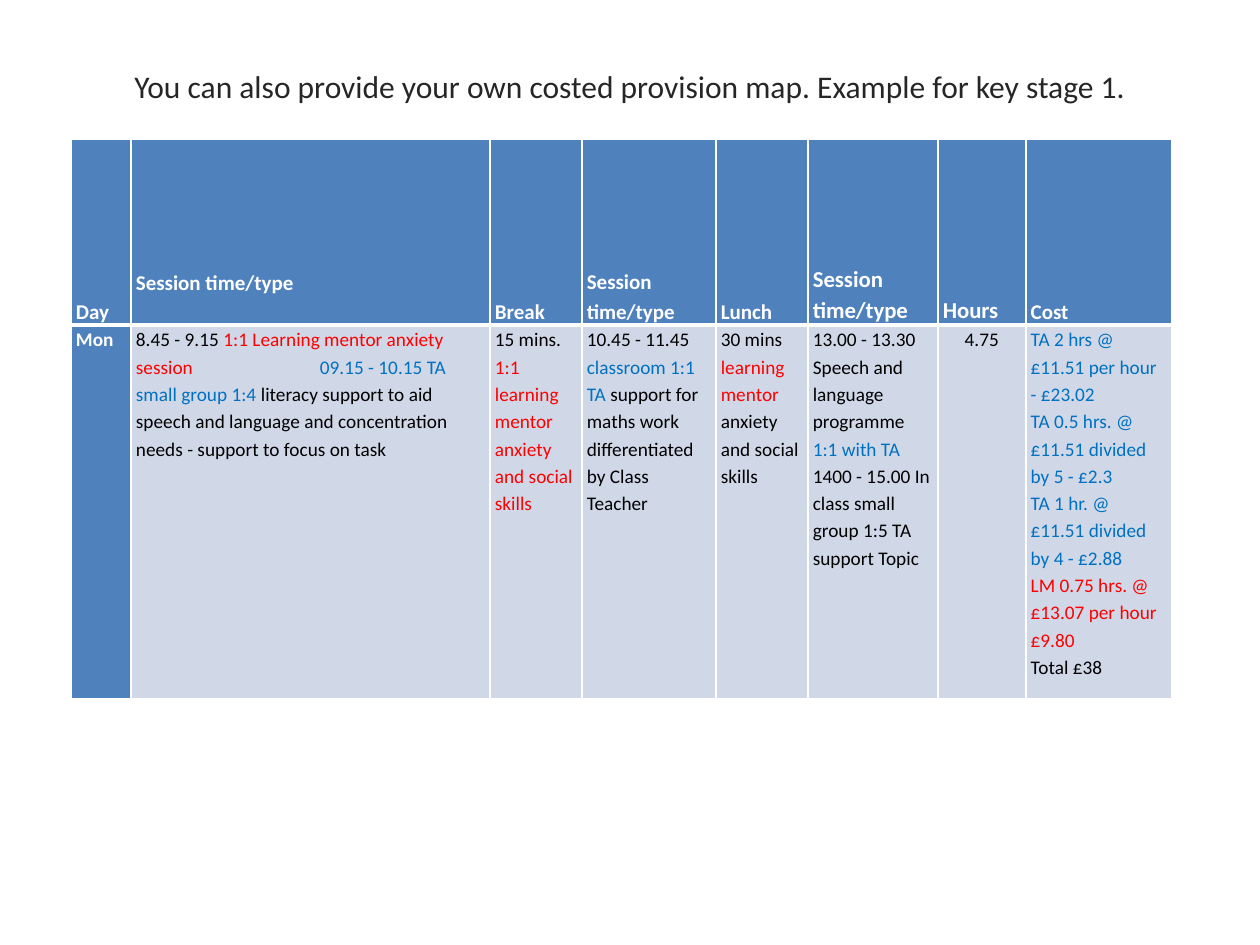
from lxml import etree
from pptx import Presentation
from pptx.dml.color import RGBColor
from pptx.enum.text import MSO_ANCHOR, PP_ALIGN
from pptx.oxml.ns import qn
from pptx.util import Pt

PX = 914400 // 126
CENTER = PP_ALIGN.CENTER
LEFT = PP_ALIGN.LEFT
TOP = MSO_ANCHOR.TOP
MIDDLE = MSO_ANCHOR.MIDDLE
BOTTOM = MSO_ANCHOR.BOTTOM

FONT = "Calibri"
WHITE = RGBColor(0xFF, 0xFF, 0xFF)
BLACK = RGBColor(0x00, 0x00, 0x00)
CHARCOAL = RGBColor(0x26, 0x26, 0x26)
MENTOR_RED = RGBColor(0xFF, 0x00, 0x00)
ASSISTANT_BLUE = RGBColor(0x00, 0x70, 0xC0)
HEADER_BLUE = RGBColor(0x4F, 0x81, 0xBD)
PALE_BLUE = RGBColor(0xD0, 0xD8, 0xE8)

TITLE = "You can also provide your own costed provision map. Example for key stage 1."
COLUMN_WIDTHS = [60, 359, 92, 134, 92, 130, 88, 146]
ROW_HEIGHTS = [186, 374]
SESSION_TAB = 184

HEADERS = [
    ("Day", 12, 0),
    ("Session time/type", 12, 29),
    ("Break", 12, 0),
    ("Session time/type", 12, 0),
    ("Lunch", 12, 0),
    ("Session time/type", 13, 0),
    ("Hours", 13, 0),
    ("Cost", 12, 0),
]

MONDAY = [
    [[("8.45 - 9.15 ", BLACK),
      ("1:1 Learning mentor anxiety session\t", MENTOR_RED),
      ("09.15 - 10.15 TA small group 1:4 ", ASSISTANT_BLUE),
      ("literacy support to aid speech and language and concentration "
       "needs - support to focus on task", BLACK)]],
    [[("15 mins. ", BLACK),
      ("1:1 learning mentor anxiety and social skills", MENTOR_RED)]],
    [[("10.45 - 11.45 ", BLACK),
      ("classroom 1:1 TA ", ASSISTANT_BLUE),
      ("support for maths work differentiated by Class Teacher", BLACK)]],
    [[("30 mins ", BLACK),
      ("learning mentor ", MENTOR_RED),
      ("anxiety and social skills", BLACK)]],
    [[("13.00 - 13.30 Speech and language programme", BLACK),
      (" 1:1 with TA", ASSISTANT_BLUE)],
     [("1400 - 15.00 In class small group 1:5 TA support Topic", BLACK)]],
    [[("4.75", BLACK)]],
    [[("TA 2 hrs @ £11.51 per hour - £23.02", ASSISTANT_BLUE)],
     [("TA 0.5 hrs. @ £11.51 divided by 5 - £2.3", ASSISTANT_BLUE)],
     [("TA 1 hr. @ £11.51 divided by 4 - £2.88", ASSISTANT_BLUE)],
     [("LM 0.75 hrs. @ £13.07 per hour", MENTOR_RED)],
     [("£9.80", MENTOR_RED)],
     [("Total £38", BLACK)]],
]


def px(length):
    return length * PX


def add_tab_stop(paragraph, position):
    properties = paragraph._p.get_or_add_pPr()
    stops = etree.SubElement(properties, qn("a:tabLst"))
    etree.SubElement(stops, qn("a:tab"), pos=str(px(position)), algn="l")


def write_paragraph(paragraph, pieces, size, bold=False, align=LEFT, spacing=1.15):
    if any("\t" in wording for wording, _ in pieces):
        add_tab_stop(paragraph, SESSION_TAB)
    paragraph.alignment = align
    paragraph.line_spacing = spacing
    paragraph.font.name = FONT
    paragraph.font.size = Pt(size)
    paragraph.font.bold = bold
    for wording, color in pieces:
        run = paragraph.add_run()
        run.text = wording
        run.font.color.rgb = color


def add_border(cell, side, points):
    line = etree.SubElement(cell._tc.get_or_add_tcPr(), qn(f"a:ln{side}"), w=str(Pt(points)))
    fill = etree.SubElement(line, qn("a:solidFill"))
    etree.SubElement(fill, qn("a:srgbClr"), val=str(WHITE))


def style_cell(cell, color, anchor, top_line, bottom_line, bottom_margin=0):
    for side, points in (("L", 1), ("R", 1), ("T", top_line), ("B", bottom_line)):
        add_border(cell, side, points)
    cell.fill.solid()
    cell.fill.fore_color.rgb = color
    cell.vertical_anchor = anchor
    cell.margin_left = cell.margin_right = px(5)
    cell.margin_top = 0
    cell.margin_bottom = px(bottom_margin)


def write_cell(cell, paragraphs, size, bold=False, align=LEFT):
    frame = cell.text_frame
    for index, pieces in enumerate(paragraphs):
        paragraph = frame.add_paragraph() if index else frame.paragraphs[0]
        write_paragraph(paragraph, pieces, size, bold, align)


def add_title(slide):
    frame = slide.shapes.add_textbox(px(87), px(58), px(1086), px(60)).text_frame
    frame.word_wrap = True
    frame.vertical_anchor = MIDDLE
    write_paragraph(frame.paragraphs[0], [(TITLE, CHARCOAL)], 18, align=CENTER, spacing=0.9)


def add_provision_map(slide):
    table = slide.shapes.add_table(
        len(ROW_HEIGHTS), len(COLUMN_WIDTHS), px(71), px(139),
        px(sum(COLUMN_WIDTHS)), px(sum(ROW_HEIGHTS))).table
    for column, width in zip(table.columns, COLUMN_WIDTHS):
        column.width = px(width)
    for row, height in zip(table.rows, ROW_HEIGHTS):
        row.height = px(height)

    for index, (heading, size, bottom_margin) in enumerate(HEADERS):
        cell = table.cell(0, index)
        style_cell(cell, HEADER_BLUE, BOTTOM, 1, 3, bottom_margin)
        write_cell(cell, [[(heading, WHITE)]], size, bold=True)

    day = table.cell(1, 0)
    style_cell(day, HEADER_BLUE, TOP, 3, 1)
    write_cell(day, [[("Mon", WHITE)]], 11, bold=True)

    for index, paragraphs in enumerate(MONDAY, start=1):
        cell = table.cell(1, index)
        style_cell(cell, PALE_BLUE, TOP, 3, 1)
        is_hours = HEADERS[index][0] == "Hours"
        write_cell(cell, paragraphs, 11, align=CENTER if is_hours else LEFT)


def main():
    presentation = Presentation()
    presentation.slide_width = px(1260)
    presentation.slide_height = px(945)
    slide = presentation.slides.add_slide(presentation.slide_layouts[6])
    add_title(slide)
    add_provision_map(slide)
    presentation.save("out.pptx")


if __name__ == "__main__":
    main()
